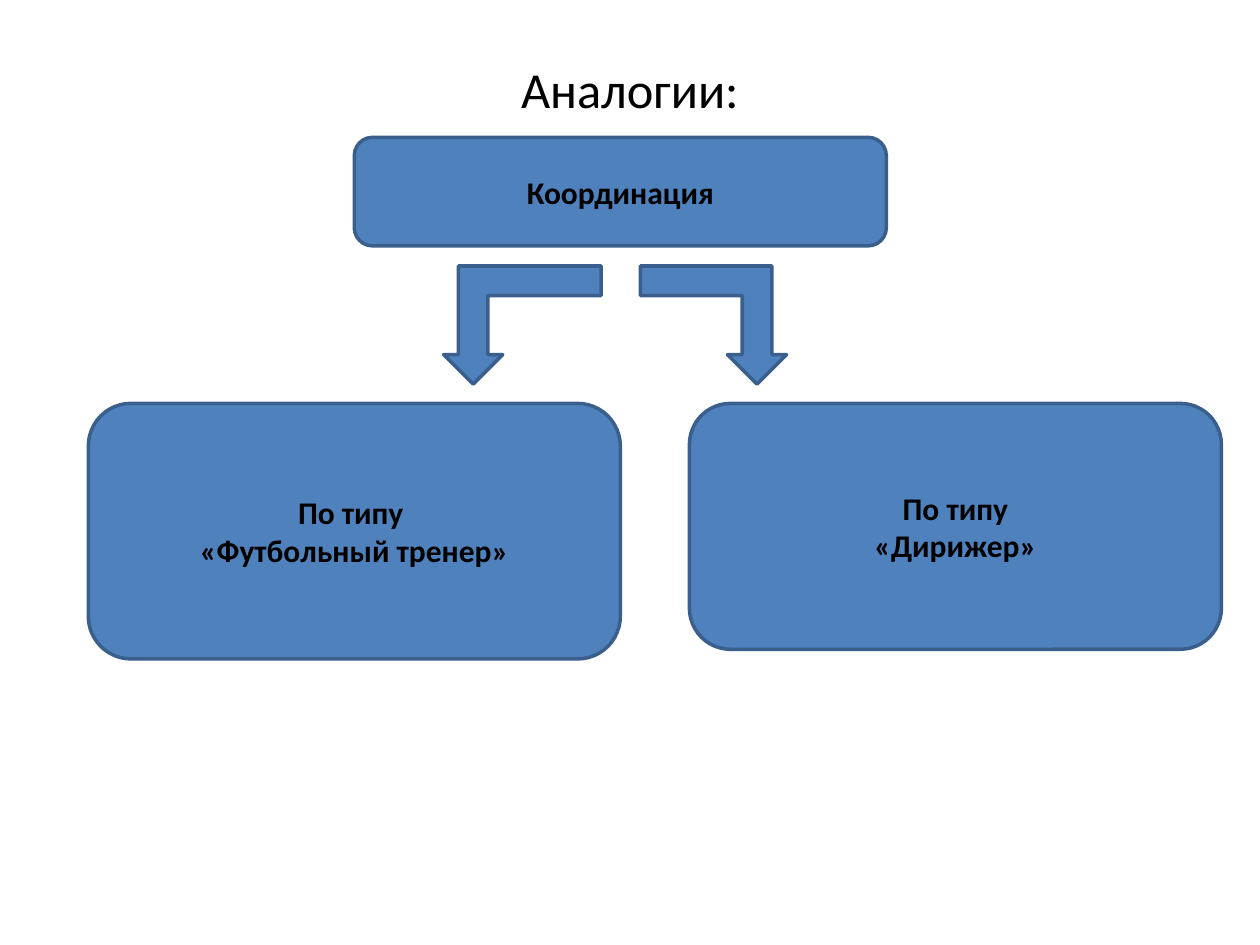
from dataclasses import dataclass

from pptx import Presentation
from pptx.dml.color import RGBColor
from pptx.enum.shapes import MSO_SHAPE
from pptx.enum.text import MSO_ANCHOR, PP_ALIGN
from pptx.util import Pt

ROUNDED = MSO_SHAPE.ROUNDED_RECTANGLE
BENT_ARROW = MSO_SHAPE.BENT_UP_ARROW
MIDDLE = MSO_ANCHOR.MIDDLE
CENTER = PP_ALIGN.CENTER


@dataclass(frozen=True)
class Theme:
    """Colours, font and sizes of the slide."""
    font: str = "Calibri"
    text: str = "000000"
    fill: str = "4F81BD"
    line: str = "3A5F8C"
    line_width: float = 2
    title_size: float = 28.8
    box_size: float = 18


THEME = Theme()


def write(sp, text, size=THEME.box_size, bold=False, color=THEME.text):
    """Put centred text in a shape, one paragraph per line."""
    tf = sp.text_frame
    tf.word_wrap = True
    tf.vertical_anchor = MIDDLE
    tf.text = text
    for p in tf.paragraphs:
        p.alignment = CENTER
        for r in p.runs:
            r.font.name = THEME.font
            r.font.size = Pt(size)
            r.font.bold = bold
            r.font.color.rgb = RGBColor.from_string(color)


def add_title(slide, text, *bounds):
    """Add the slide heading."""
    sp = slide.shapes.add_textbox(*map(Pt, bounds))
    write(sp, text, size=THEME.title_size)


def add_filled(slide, kind, *bounds):
    """Add a preset shape in the theme's fill and outline."""
    sp = slide.shapes.add_shape(kind, *map(Pt, bounds))
    sp.shadow.inherit = False
    sp.fill.solid()
    sp.fill.fore_color.rgb = RGBColor.from_string(THEME.fill)
    sp.line.color.rgb = RGBColor.from_string(THEME.line)
    sp.line.width = Pt(THEME.line_width)
    return sp


def add_box(slide, text, *bounds):
    """Add a rounded box with a bold label."""
    write(add_filled(slide, ROUNDED, *bounds), text, bold=True)


def add_arrow(slide, *bounds, to_right=False):
    """Add a bent arrow that points down on the left or right."""
    sp = add_filled(slide, BENT_ARROW, *bounds)
    sp.rotation = 180
    if to_right:
        sp.element.spPr.xfrm.set("flipH", "1")


def main():
    """Build the slide and save it."""
    prs = Presentation()
    prs.slide_width, prs.slide_height = Pt(720), Pt(540)
    slide = prs.slides.add_slide(prs.slide_layouts[6])
    box_w, types_top = 304, 230.5
    arrow_top, arrow_h = 152, 67.5

    add_title(slide, "Аналогии:", 36, 28, 648, 45.5)
    add_box(slide, "Координация", 202.5, 78.5, box_w, 62)
    add_box(slide, "По типу\n«Дирижер»", 394, types_top, box_w, 140.5)
    add_box(slide, "По типу \n«Футбольный тренер»", 50.5, types_top, box_w, 146)
    add_arrow(slide, 253.5, arrow_top, 90, arrow_h)
    add_arrow(slide, 366, arrow_top, 83.5, arrow_h, to_right=True)
    prs.save("out.pptx")


if __name__ == "__main__":
    main()
